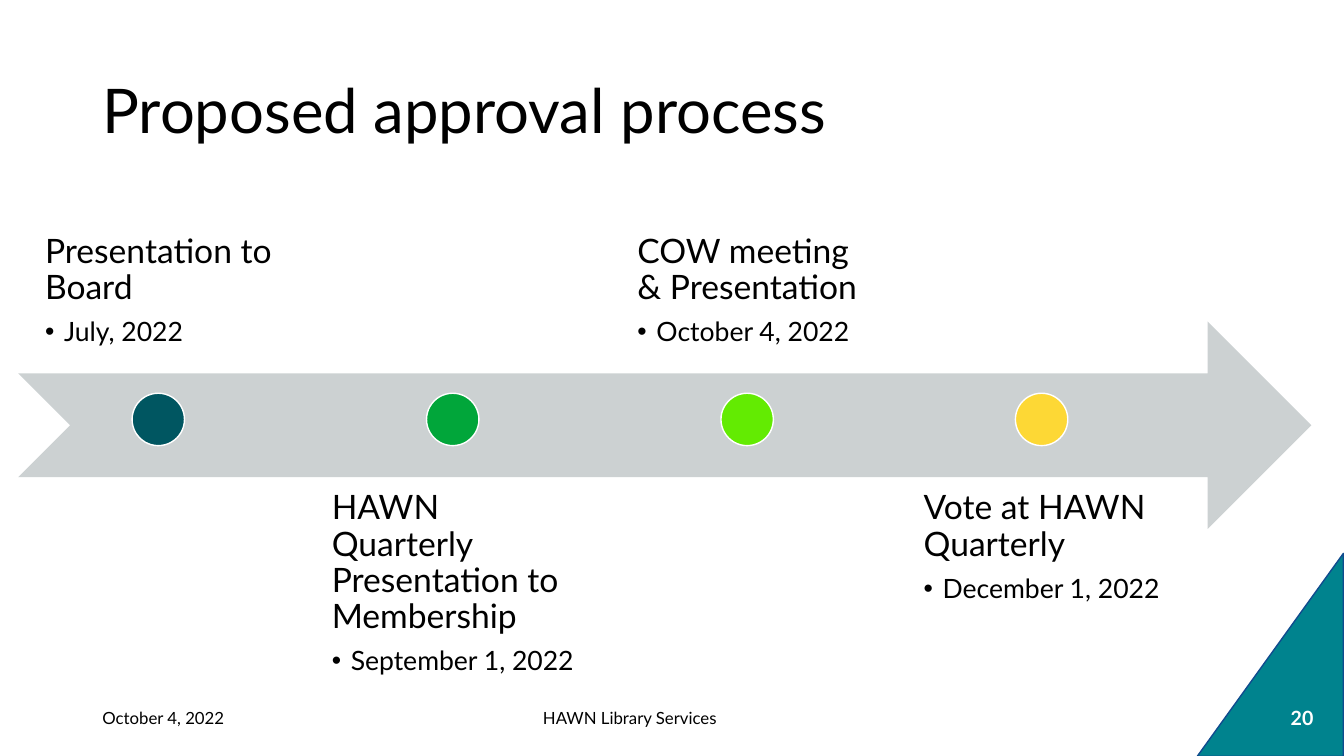
from dataclasses import dataclass

from lxml.etree import SubElement
from pptx import Presentation
from pptx.dml.color import RGBColor
from pptx.enum.shapes import MSO_SHAPE
from pptx.enum.text import MSO_ANCHOR, MSO_AUTO_SIZE, PP_ALIGN
from pptx.oxml.ns import qn
from pptx.util import Cm, Pt


@dataclass(frozen=True)
class Theme:
    font: str = "Lato"
    ink: str = "000000"
    paper: str = "FFFFFF"
    arrow: str = "CCD1D2"
    corner: str = "00838E"
    edge: str = "104B8E"
    title: int = 44
    head: int = 24
    item: int = 19
    page: int = 14
    foot: int = 12


THEME = Theme()
STEP = 7.42
STAGES = [
    ("Presentation to Board", "July, 2022", "005661"),
    ("HAWN Quarterly Presentation to Membership", "September 1, 2022", "01A63A"),
    ("COW meeting & Presentation", "October 4, 2022", "63EB02"),
    ("Vote at HAWN Quarterly", "December 1, 2022", "FDD835"),
]
INSET = Cm(0.48)
FRAME = {"word_wrap": True, "auto_size": MSO_AUTO_SIZE.NONE}
PADS = {"margin_left": INSET, "margin_right": INSET,
        "margin_top": INSET, "margin_bottom": INSET}
TIGHT = {"alignment": PP_ALIGN.LEFT, "line_spacing": 0.9, "space_before": Pt(0)}


def apply(target, values):
    for name, value in values.items():
        setattr(target, name, value)


def place(shape, left, top, width, height):
    apply(shape, {"left": Cm(left), "top": Cm(top),
                  "width": Cm(width), "height": Cm(height)})


def write(para, text, size, color=THEME.ink, bold=False):
    run = para.add_run()
    run.text = text
    apply(run.font, {"name": THEME.font, "size": Pt(size), "bold": bold})
    run.font.color.rgb = RGBColor.from_string(color)


def bullet(para, mark=None):
    props = para._p.get_or_add_pPr()
    indent = INSET if mark else 0
    props.set("marL", str(indent))
    props.set("indent", str(-indent))
    if mark:
        SubElement(props, qn("a:buFont")).set("typeface", "Arial")
        SubElement(props, qn("a:buChar")).set("char", mark)
    else:
        SubElement(props, qn("a:buNone"))


def draw(slide, kind, box, fill, line=None):
    shape = slide.shapes.add_shape(kind, *map(Cm, box))
    shape.shadow.inherit = False
    shape.fill.solid()
    shape.fill.fore_color.rgb = RGBColor.from_string(fill)
    if line:
        shape.line.color.rgb = RGBColor.from_string(line)
        shape.line.width = Pt(1)
    else:
        shape.line.fill.background()
    return shape


def title(slide, text):
    shape = slide.shapes.title
    place(shape, 2.33, 1.01, 29.21, 3.68)
    frame = shape.text_frame
    apply(frame, {**FRAME, "vertical_anchor": MSO_ANCHOR.MIDDLE})
    para = frame.paragraphs[0]
    apply(para, TIGHT)
    write(para, text, THEME.title)


def label(shape, index, head, date):
    above = index % 2 == 0
    place(shape, 0.46 + index * STEP, 4.01 if above else 11.89, 7.06, 5.23)
    frame = shape.text_frame
    anchor = MSO_ANCHOR.BOTTOM if above else MSO_ANCHOR.TOP
    apply(frame, {**FRAME, **PADS, "vertical_anchor": anchor})
    frame._txBody.bodyPr.set("anchorCtr", "1")
    first = frame.paragraphs[0]
    apply(first, {**TIGHT, "space_after": Pt(8.4)})
    bullet(first)
    write(first, head, THEME.head)
    second = frame.add_paragraph()
    apply(second, {**TIGHT, "level": 1, "space_after": Pt(2.8)})
    bullet(second, "•")
    write(second, date, THEME.item)


def note(slide, text, left, width, size, align, color=THEME.ink, bold=False):
    shape = slide.shapes.add_textbox(Cm(left), Cm(17.58), Cm(width), Cm(1.02))
    frame = shape.text_frame
    apply(frame, {**FRAME, "vertical_anchor": MSO_ANCHOR.MIDDLE})
    para = frame.paragraphs[0]
    para.alignment = align
    write(para, text, size, color, bold)


def main():
    deck = Presentation()
    apply(deck, {"slide_width": Cm(33.87), "slide_height": Cm(19.05)})
    slide = deck.slides.add_slide(deck.slide_layouts.get_by_name("Comparison"))
    title(slide, "Proposed approval process")
    corner = draw(slide, MSO_SHAPE.RIGHT_TRIANGLE, (29.46, 14.66, 5.11, 3.68),
                  THEME.corner, THEME.edge)
    corner.rotation = 270
    draw(slide, MSO_SHAPE.NOTCHED_RIGHT_ARROW, (0.46, 8.1, 32.59, 5.23), THEME.arrow)
    bodies = list(slide.placeholders)[1:]
    for index, (body, (head, date, color)) in enumerate(zip(bodies, STAGES)):
        label(body, index, head, date)
        draw(slide, MSO_SHAPE.OVAL, (3.33 + index * STEP, 9.91, 1.32, 1.32),
             color, THEME.paper)
    note(slide, "October 4, 2022", 2.33, 7.62, THEME.foot, PP_ALIGN.LEFT)
    note(slide, "HAWN Library Services", 10.16, 11.43, THEME.foot, PP_ALIGN.CENTER)
    note(slide, "20", 32.08, 1.47, THEME.page, PP_ALIGN.CENTER, THEME.paper, True)
    deck.save("out.pptx")


if __name__ == "__main__":
    main()
